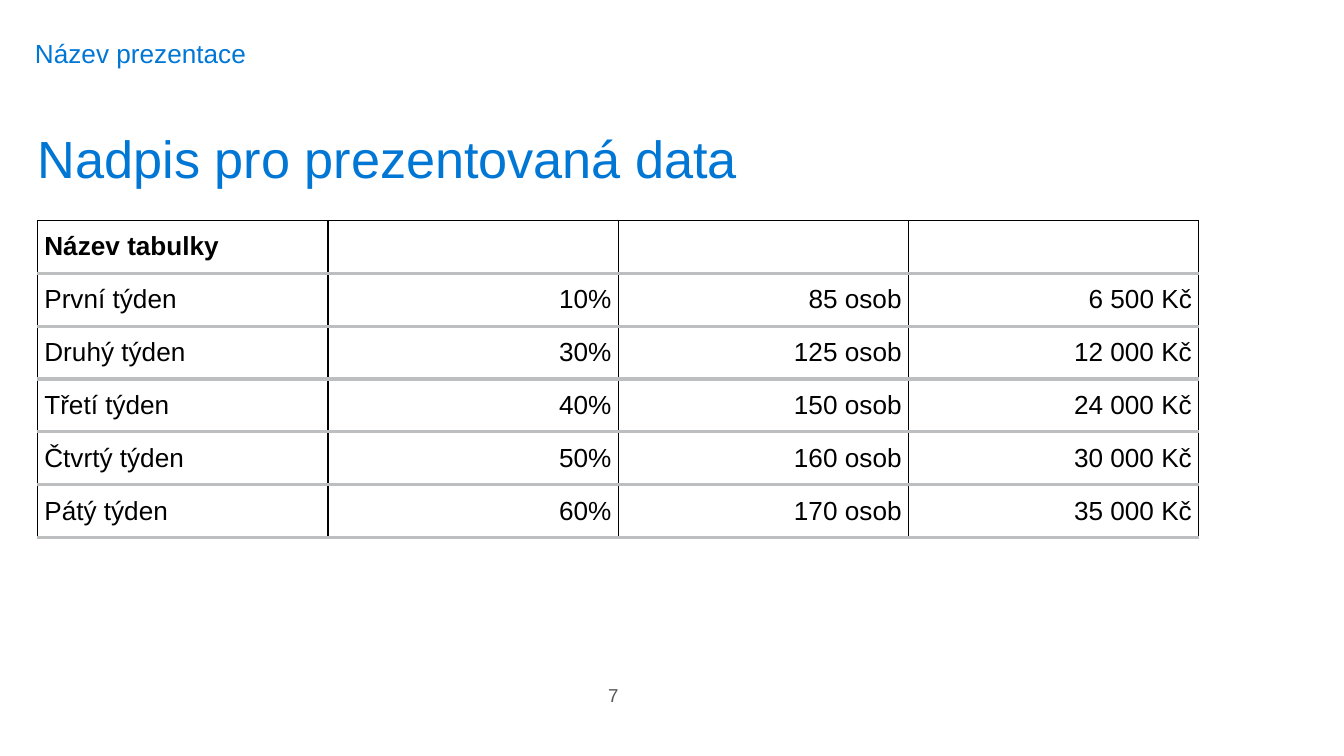
from dataclasses import dataclass

from lxml import etree
from pptx import Presentation
from pptx import util as u
from pptx.dml.color import RGBColor
from pptx.enum import text
from pptx.oxml import ns


@dataclass(frozen=True)
class Theme:
    font: str = "Arial"
    accent: str = "0076D5"
    ink: str = "000000"
    muted: str = "585858"
    rule: str = "BCBEC0"
    paper: str = "FFFFFF"
    title_size: float = 28
    text_size: float = 14
    number_size: float = 10
    thin: float = 0.75
    thick: float = 2


THEME = Theme()
WIDTH = 10
HEIGHT = WIDTH * 9 / 16
LEFT = 0.28
TABLE_TOP = 1.64
TABLE_WIDTH, TABLE_HEIGHT = 8.64, 2.36
CELL_INSET = 0.05
ROWS = [
    ("Název tabulky", "", "", ""),
    ("První týden", "10%", "85 osob", "6 500 Kč"),
    ("Druhý týden", "30%", "125 osob", "12 000 Kč"),
    ("Třetí týden", "40%", "150 osob", "24 000 Kč"),
    ("Čtvrtý týden", "50%", "160 osob", "30 000 Kč"),
    ("Pátý týden", "60%", "170 osob", "35 000 Kč"),
]


def write(para, words, size, color, bold=False, align=text.PP_ALIGN.LEFT):
    para.alignment = align
    para.space_before = u.Pt(0)
    span = para.add_run()
    span.text = words
    span.font.name = THEME.font
    span.font.size = u.Pt(size)
    span.font.bold = bold
    span.font.color.rgb = RGBColor.from_string(color)


def place(box, left, top, width, height):
    box.left, box.top = u.Inches(left), u.Inches(top)
    box.width, box.height = u.Inches(width), u.Inches(height)


def set_frame(frame, insets, anchor=text.MSO_ANCHOR.TOP):
    frame.auto_size = text.MSO_AUTO_SIZE.NONE
    frame.word_wrap = True
    frame.vertical_anchor = anchor
    (frame.margin_left, frame.margin_top,
     frame.margin_right, frame.margin_bottom) = map(u.Inches, insets)


def add_title(page, words):
    box = page.shapes.title
    place(box, LEFT, 0.84, 8.27, 0.63)
    set_frame(box.text_frame, (0, 0.1, 0.1, 0.1))
    write(box.text_frame.paragraphs[0], words, THEME.title_size, THEME.accent)


def add_header(page, words):
    box = page.placeholders[1]
    place(box, 0.13, 0.28, 8.27, 0.39)
    set_frame(box.text_frame, (0, 0, 0.1, 0.1))
    para = box.text_frame.paragraphs[0]
    properties = para._p.get_or_add_pPr()
    properties.set("marL", str(u.Inches(0.38)))
    properties.set("indent", str(u.Inches(-0.25)))
    etree.SubElement(properties, ns.qn("a:buNone"))
    write(para, words, THEME.text_size, THEME.accent)


def add_page_number(page, number):
    box = page.shapes.add_textbox(0, 0, 0, 0)
    place(box, 4.33, 5, 0.37, 0.35)
    set_frame(box.text_frame, (0.1,) * 4, text.MSO_ANCHOR.MIDDLE)
    write(box.text_frame.paragraphs[0], number, THEME.number_size,
          THEME.muted, align=text.PP_ALIGN.RIGHT)


def set_borders(cell, is_header):
    side = (THEME.ink, THEME.thin)
    rule = (THEME.rule, THEME.thick)
    borders = {"lnL": side, "lnR": side, "lnT": side if is_header else rule, "lnB": rule}
    properties = cell._tc.get_or_add_tcPr()
    for index, (tag, (color, weight)) in enumerate(borders.items()):
        line = etree.Element(ns.qn(f"a:{tag}"), w=str(u.Pt(weight)))
        fill = etree.SubElement(line, ns.qn("a:solidFill"))
        etree.SubElement(fill, ns.qn("a:srgbClr"), val=color)
        properties.insert(index, line)


def format_cell(cell, words, is_header, is_label):
    cell.margin_left = cell.margin_right = u.Inches(CELL_INSET)
    cell.margin_top = cell.margin_bottom = u.Inches(CELL_INSET)
    cell.vertical_anchor = text.MSO_ANCHOR.MIDDLE
    if is_header:
        cell.fill.background()
    else:
        cell.fill.solid()
        cell.fill.fore_color.rgb = RGBColor.from_string(THEME.paper)
    set_borders(cell, is_header)
    para = cell.text_frame.paragraphs[0]
    if words:
        align = text.PP_ALIGN.LEFT if is_label else text.PP_ALIGN.RIGHT
        write(para, words, THEME.text_size, THEME.ink, is_header, align)
    else:
        para.font.size = u.Pt(THEME.text_size)


def add_data_table(page, rows):
    frame = page.shapes.add_table(
        len(rows), len(rows[0]), u.Inches(LEFT), u.Inches(TABLE_TOP),
        u.Inches(TABLE_WIDTH), u.Inches(TABLE_HEIGHT))
    table = frame.table
    table.first_row = table.horz_banding = False
    for row_index, row in enumerate(rows):
        for column_index, words in enumerate(row):
            format_cell(table.cell(row_index, column_index), words,
                        row_index == 0, column_index == 0)


def main():
    deck = Presentation()
    deck.slide_width, deck.slide_height = u.Inches(WIDTH), u.Inches(HEIGHT)
    page = deck.slides.add_slide(deck.slide_layouts[1])
    add_page_number(page, "7")
    add_title(page, "Nadpis pro prezentovaná data")
    add_header(page, "Název prezentace")
    add_data_table(page, ROWS)
    deck.save("out.pptx")


if __name__ == "__main__":
    main()
